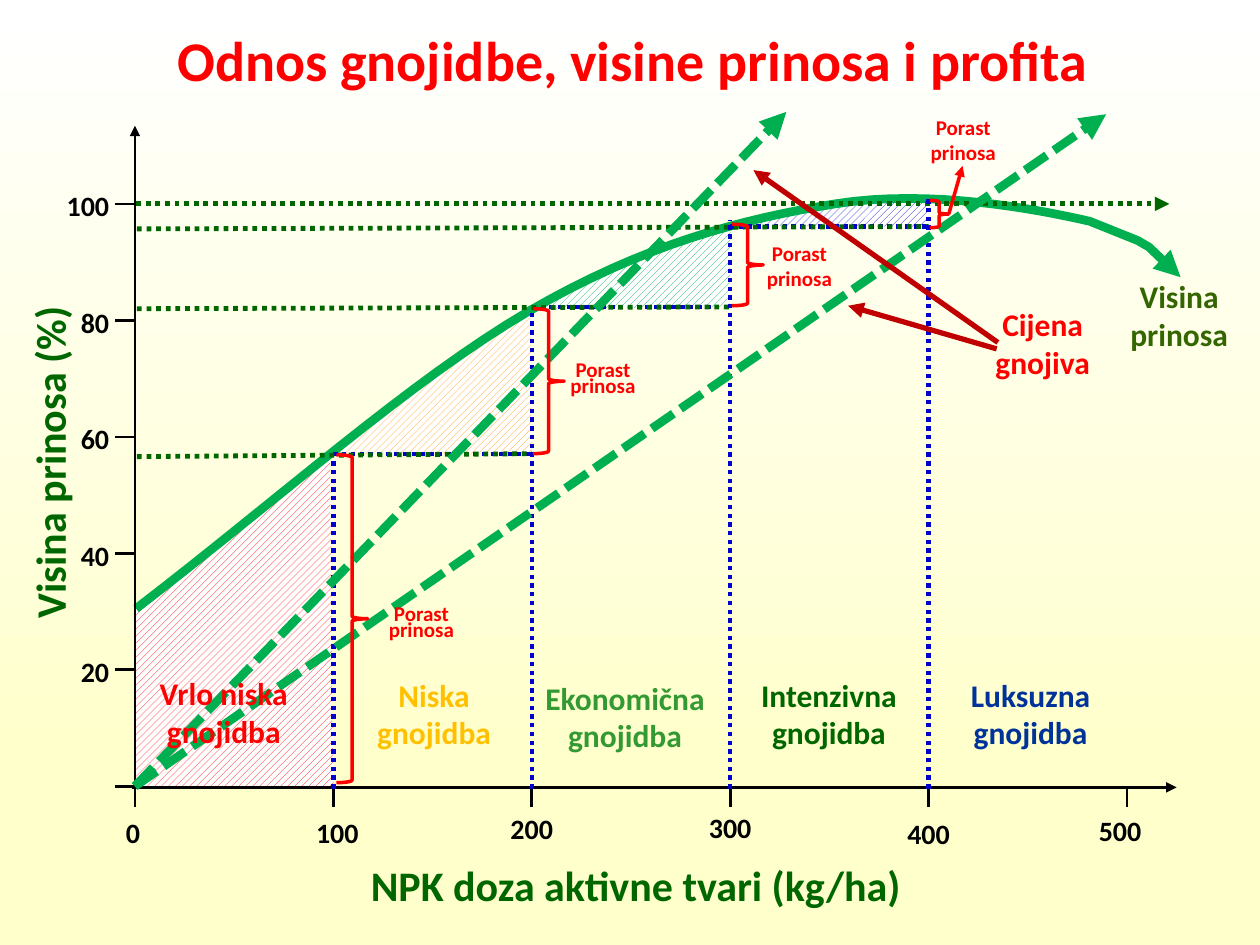
from dataclasses import dataclass

from lxml import etree
from pptx import Presentation
from pptx import util as u
from pptx.dml.color import RGBColor
from pptx.enum import dml, shapes, text
from pptx.oxml.ns import qn


@dataclass(frozen=True)
class Theme:
    font: str = "Calibri"
    black: str = "000000"
    white: str = "FFFFFF"
    cream: str = "FFFFCC"
    red: str = "FF0000"
    dark_red: str = "C00000"
    green: str = "00B050"
    leaf: str = "339933"
    olive: str = "336600"
    dark_green: str = "006600"
    blue: str = "0000CC"
    navy: str = "003399"
    amber: str = "FFC000"
    orange: str = "FF9900"
    title: int = 32
    axis: int = 24
    zone: int = 18
    tick: int = 16
    note: int = 12


@dataclass(frozen=True)
class Box:
    left: float
    top: float
    width: float
    height: float

    def at(self, dose, percent):
        x = self.left + self.width * dose / 500
        y = self.top + self.height * (1 - percent / 100)
        return u.Cm(x), u.Cm(y)

    def around(self, dose, percent, width, height):
        x, y = self.at(dose, percent)
        return Box(x.cm - width / 2, y.cm - height / 2, width, height)

    def lengths(self):
        return [u.Cm(n) for n in (self.left, self.top, self.width, self.height)]


THEME = Theme()
DOTS = dml.MSO_LINE.ROUND_DOT
DASHES = dml.MSO_LINE.SQUARE_DOT


def assign(target, values):
    for name, value in values.items():
        setattr(target, name, value)


def add_text(page, box, lines, size, color, spacing=1.0, align="CENTER", turn=0):
    label = page.shapes.add_textbox(*box.lengths())
    label.rotation = turn
    assign(label.text_frame, {
        "word_wrap": True, "vertical_anchor": text.MSO_ANCHOR.MIDDLE,
        "margin_left": 0, "margin_right": 0, "margin_top": 0, "margin_bottom": 0,
    })
    for index, line in enumerate(lines):
        frame = label.text_frame
        para = frame.add_paragraph() if index else frame.paragraphs[0]
        assign(para, {"alignment": text.PP_ALIGN[align], "line_spacing": spacing})
        span = para.add_run()
        span.text = line
        assign(span.font, {"name": THEME.font, "size": u.Pt(size), "bold": True})
        span.font.color.rgb = RGBColor.from_string(color)


def style_line(line, color, width, dash=None, arrow=False):
    line.fill.solid()
    line.fill.fore_color.rgb = RGBColor.from_string(color)
    line.width = u.Pt(width)
    if dash:
        line.dash_style = dash
    if arrow:
        properties = line._get_or_add_ln()
        etree.SubElement(properties, qn("a:tailEnd"), type="triangle")


def add_line(page, start, end, *style, **options):
    line = page.shapes.add_connector(shapes.MSO_CONNECTOR.STRAIGHT, *start, *end)
    style_line(line.line, *style, **options)
    etree.SubElement(line._element.spPr, qn("a:effectLst"))


def add_outline(page, plot, points, close):
    start, *rest = [plot.at(*point) for point in points]
    builder = page.shapes.build_freeform(*start)
    builder.add_line_segments(rest, close=close)
    outline = builder.convert_to_shape()
    outline.shadow.inherit = False
    return outline


def bezier(points, steps=16):
    for step in range(1, steps + 1):
        t = step / steps
        weights = ((1 - t) ** 3, 3 * t * (1 - t) ** 2, 3 * t * t * (1 - t), t ** 3)
        yield tuple(sum(w * p[axis] for w, p in zip(weights, points)) for axis in (0, 1))


def draw_background(page):
    fill = page.background.fill
    fill.gradient()
    fill.gradient_angle = 270
    for stop, position, color in zip(fill.gradient_stops, (0, 0.8), (THEME.white, THEME.cream)):
        stop.position = position
        stop.color.rgb = RGBColor.from_string(color)


def draw_areas(page, plot):
    areas = (
        (THEME.red, [(0, 30.3), (52, 44.6), (98.4, 56.9), (100, 0), (0, 0)]),
        (THEME.orange, [(98.4, 57.1), (200, 57.1), (199.4, 82.3), (182.2, 78.8),
                        (164.4, 74.7), (144.8, 69.9), (127, 65.2), (113, 61.5)]),
        (THEME.green, [(200.6, 82), (299.7, 82.3), (300.3, 96.1), (283.2, 94.6),
                       (264.8, 92.2), (245.7, 89.8), (227.9, 87), (214.6, 84.6)]),
        (THEME.blue, [(300.3, 96.3), (400, 96.1), (400.6, 101.1), (382.9, 101.1),
                      (365.7, 100.6), (346, 99.8), (334.6, 98.9), (314.9, 97.8)]),
    )
    for color, points in areas:
        area = add_outline(page, plot, points, True)
        area.fill.patterned()
        area.fill.pattern = dml.MSO_PATTERN.WIDE_UPWARD_DIAGONAL
        area.fill.fore_color.rgb = RGBColor.from_string(color)
        area.fill.back_color.rgb = RGBColor.from_string(THEME.white)
        area.line.fill.background()


def draw_curve(page, plot):
    knots = [(0.6, 30.5), (71.1, 48.9), (139.7, 69.9), (198.7, 81.6), (257.1, 93.1),
             (306, 97.4), (353, 100), (400.6, 102.6), (454.6, 99.1), (481.3, 97)]
    points = knots[:1]
    for first in (0, 3, 6):
        points.extend(bezier(knots[first:first + 4]))
    points += [(505.4, 93.7), (511, 92.6), (527, 87.4)]
    curve = add_outline(page, plot, points, False)
    curve.fill.background()
    style_line(curve.line, THEME.green, 5, arrow=True)


def draw_axes(page, plot):
    for start, end in (((0, -0.4), (0, 113.4)), ((-1.3, -0.2), (525, -0.2))):
        add_line(page, plot.at(*start), plot.at(*end), THEME.black, 1.5, arrow=True)
    tick = u.Cm(0.4)
    for dose, middle, drop in ((0, -1, 7.9), (100, 102, 7.9), (200, 200, 7.3),
                               (300, 300, 7.1), (400, 400, 8), (500, 496.5, 7.6)):
        x, y = plot.at(dose, -0.2)
        add_line(page, (x, y), (x, y + tick), THEME.black, 1.5)
        add_text(page, plot.around(middle, -drop, 1.6, 0.9), [str(dose)], THEME.tick, THEME.black)
    for percent in range(0, 101, 20):
        x, y = plot.at(0, percent)
        add_line(page, (x, y), (x - tick, y), THEME.black, 1.5)
        if percent:
            add_text(page, plot.around(-28, percent - 0.3, 1.2, 0.9), [str(percent)],
                     THEME.tick, THEME.black, align="RIGHT")
    add_text(page, plot.around(252.4, -16.9, 11.4, 1.27), ["NPK doza aktivne tvari (kg/ha)"],
             THEME.axis, THEME.dark_green)
    add_text(page, plot.around(-43.2, 55.6, 6.9, 1.27), ["Visina prinosa (%)"],
             THEME.axis, THEME.dark_green, turn=270)


def draw_guides(page, plot):
    add_line(page, plot.at(0.6, 100), plot.at(521.3, 100), THEME.dark_green, 2.75, DOTS, True)
    steps = ((100, 57.1, 56.6), (200, 82.3, 82), (300, 96.1, 95.7))
    for dose, percent, start in steps:
        add_line(page, plot.at(dose, percent), plot.at(dose + 101, percent), THEME.blue, 2.5, DOTS)
        add_line(page, plot.at(1, start), plot.at(dose + 100, percent),
                 THEME.dark_green, 2.75, DOTS)
    for dose, percent in ((100, 56.5), (200, 81.8), (300, 97.2), (400, 100.9)):
        add_line(page, plot.at(dose, -0.4), plot.at(dose, percent), THEME.blue, 2.5, DOTS)


def draw_prices(page, plot):
    for end in ((328.3, 115.8), (489.5, 115.4)):
        add_line(page, plot.at(0, 0), plot.at(*end), THEME.green, 5, DASHES, True)
    for start, end in (((434.3, 75.1), (359.4, 82.5)), ((434.9, 76.2), (311.7, 105.8))):
        add_line(page, plot.at(*start), plot.at(*end), THEME.dark_red, 3, arrow=True)


def draw_gains(page, plot):
    gains = (
        (101.6, 56.9, 0.6, 0.63, (144.4, 27.8), 0.65),
        (200.6, 82, 57.1, 0.63, (235.9, 69.6), 0.65),
        (300.9, 96.5, 82.5, 0.63, (334.9, 89.4), 1.0),
        (400.6, 100.6, 95.9, 0.38, (417.5, 111), 1.0),
    )
    for dose, high, low, width, center, spacing in gains:
        x, y = plot.at(dose, high)
        height = plot.at(dose, low)[1] - y
        brace = page.shapes.add_shape(shapes.MSO_SHAPE.RIGHT_BRACE, x, y, u.Cm(width), height)
        brace.shadow.inherit = False
        brace.fill.background()
        style_line(brace.line, THEME.red, 2)
        add_text(page, plot.around(*center, 1.7, 1), ["Porast", "prinosa"],
                 THEME.note, THEME.red, spacing)
    add_line(page, plot.at(410.2, 98.3), plot.at(417.1, 106.5), THEME.red, 2, arrow=True)


def draw_labels(page, plot):
    labels = (
        (44.8, 12.7, "Vrlo niska", "gnojidba", THEME.red),
        (150.8, 12.5, "Niska", "gnojidba", THEME.amber),
        (247, 12, "Ekonomična", "gnojidba", THEME.leaf),
        (349.8, 12.5, "Intenzivna", "gnojidba", THEME.dark_green),
        (451.4, 12.5, "Luksuzna", "gnojidba", THEME.navy),
        (457.5, 76.1, "Cijena", "gnojiva", THEME.red),
        (526.3, 81, "Visina", "prinosa", THEME.olive),
    )
    for dose, percent, first, second, color in labels:
        add_text(page, plot.around(dose, percent, 3.6, 1.8), [first, second], THEME.zone, color)


def main():
    deck = Presentation()
    assign(deck, {"slide_width": u.Cm(25.4), "slide_height": u.Cm(19.05)})
    page = deck.slides.add_slide(deck.slide_layouts[6])
    draw_background(page)
    add_text(page, Box(0.48, 0.38, 24.56, 1.63), ["Odnos gnojidbe, visine prinosa i profita"],
             THEME.title, THEME.red)
    plot = Box(2.72, 4.11, 20, 11.74)
    for draw in (draw_areas, draw_curve, draw_axes, draw_guides,
                 draw_prices, draw_gains, draw_labels):
        draw(page, plot)
    deck.save("out.pptx")


if __name__ == "__main__":
    main()
